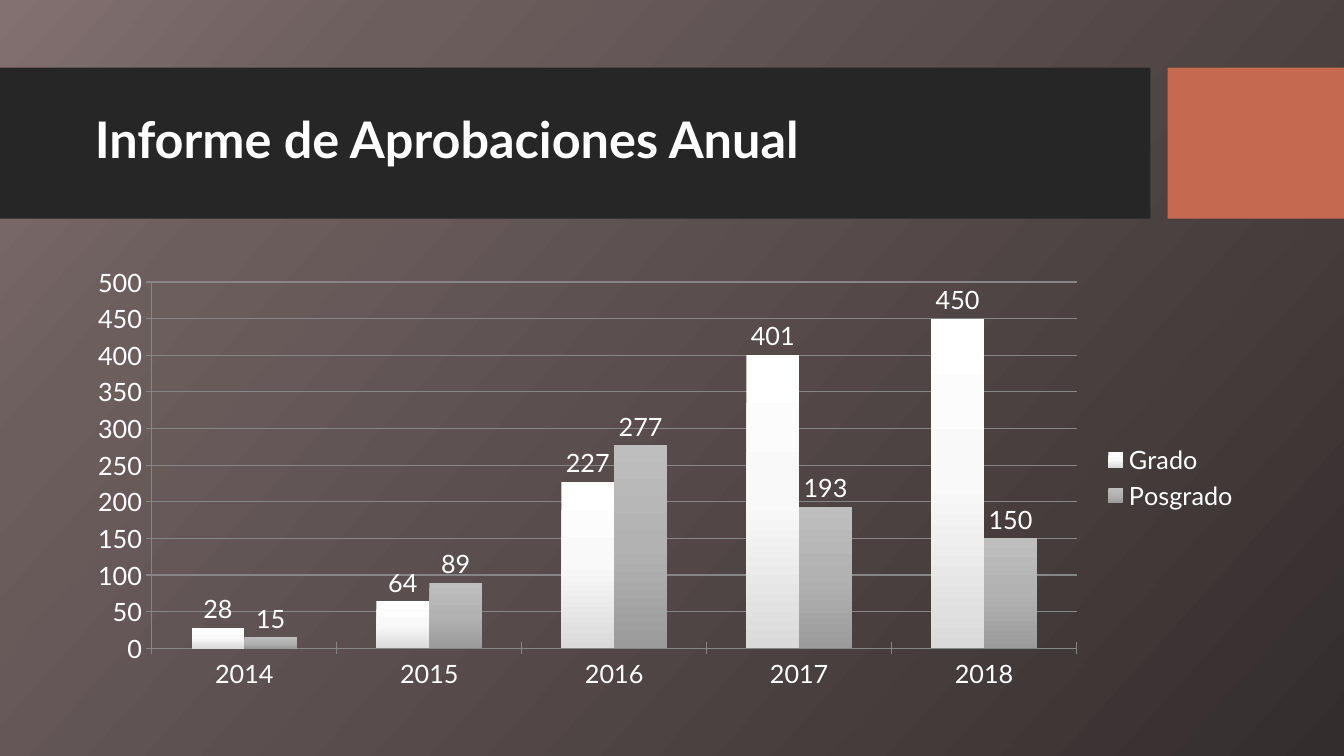
from lxml import etree
from pptx import Presentation
from pptx.chart.data import CategoryChartData
from pptx.dml.color import RGBColor
from pptx.enum.chart import XL_CHART_TYPE, XL_LABEL_POSITION, XL_LEGEND_POSITION, XL_TICK_MARK
from pptx.enum.shapes import MSO_SHAPE
from pptx.enum.text import MSO_ANCHOR
from pptx.oxml.ns import qn
from pptx.util import Inches, Pt

COLUMN_CLUSTERED = XL_CHART_TYPE.COLUMN_CLUSTERED
LABEL_ABOVE = XL_LABEL_POSITION.OUTSIDE_END
LEGEND_RIGHT = XL_LEGEND_POSITION.RIGHT
TICK_CROSS = XL_TICK_MARK.CROSS
RECTANGLE = MSO_SHAPE.RECTANGLE
MIDDLE = MSO_ANCHOR.MIDDLE

FONT = "Lato"
COLORS = {
    "band": "262626",
    "accent": "C66951",
    "text": "FFFFFF",
    "grid": "868686",
}
BACKGROUND_STOPS = [(0, "837070"), (21, "6D5E5E"), (100, "342D2D")]

YEARS = ["2014", "2015", "2016", "2017", "2018"]
# Name, yearly values, gradient from top to bottom
SERIES = [
    ("Grado", [28, 64, 227, 401, 450],
     [(0, "FFFFFF"), (50, "F9F9F9"), (100, "DADADA")]),
    ("Posgrado", [15, 89, 277, 193, 150],
     [(0, "BEBEBE"), (50, "B2B2B2"), (100, "9B9B9B")]),
]

SLIDE_WIDTH, SLIDE_HEIGHT = 13.33, 7.5
BAND_TOP, BAND_HEIGHT = 0.67, 1.5
MARGIN = 0.74


def rgb(name):
    return RGBColor.from_string(COLORS[name])


def box(left, top, width, height):
    return [Inches(length) for length in (left, top, width, height)]


def set_gradient(fill, element, stops, clockwise_angle):
    """Fill with any number of stops, given as (percent, colour)."""
    fill.gradient()
    fill.gradient_angle = 360 - clockwise_angle
    stop_list = next(element.iter(qn("a:gsLst")))
    for old_stop in list(stop_list):
        stop_list.remove(old_stop)
    for percent, color in stops:
        stop = etree.SubElement(stop_list, qn("a:gs"), pos=str(percent * 1000))
        etree.SubElement(stop, qn("a:srgbClr"), val=color)


def set_font(font, size, bold=False):
    font.name = FONT
    font.size = Pt(size)
    font.bold = bold
    font.color.rgb = rgb("text")


def add_block(slide, left, width, color):
    block = slide.shapes.add_shape(RECTANGLE, *box(left, BAND_TOP, width, BAND_HEIGHT))
    block.shadow.inherit = False
    block.fill.solid()
    block.fill.fore_color.rgb = rgb(color)
    block.line.fill.background()


def add_title(slide, text):
    title = slide.shapes.add_textbox(*box(MARGIN, 0.82, 10.51, 1.18))
    text_frame = title.text_frame
    text_frame.word_wrap = True
    text_frame.vertical_anchor = MIDDLE
    text_frame.margin_left = Inches(0.2)
    text_frame.text = text
    paragraph = text_frame.paragraphs[0]
    paragraph.line_spacing = 0.9
    set_font(paragraph.runs[0].font, 36, bold=True)


def style_axis(axis):
    axis.major_tick_mark = TICK_CROSS
    axis.format.line.color.rgb = rgb("grid")
    set_font(axis.tick_labels.font, 18)


def add_approvals_chart(slide):
    chart_data = CategoryChartData()
    chart_data.categories = YEARS
    for name, values, _ in SERIES:
        chart_data.add_series(name, values)
    chart = slide.shapes.add_chart(
        COLUMN_CLUSTERED, *box(MARGIN, 2.56, 11.65, 4.36), chart_data).chart
    set_font(chart.font, 18)
    chart.has_title = False

    # Legend
    chart.has_legend = True
    chart.legend.position = LEGEND_RIGHT
    chart.legend.include_in_layout = False
    set_font(chart.legend.font, 18)

    # Axes
    style_axis(chart.category_axis)
    value_axis = chart.value_axis
    style_axis(value_axis)
    value_axis.minimum_scale = 0
    value_axis.maximum_scale = 500
    value_axis.major_unit = 50
    value_axis.has_major_gridlines = True
    value_axis.major_gridlines.format.line.color.rgb = rgb("grid")

    # Columns
    plot = chart.plots[0]
    plot.gap_width = 150
    plot.overlap = 0
    plot.vary_by_categories = False
    for series, (_, _, stops) in zip(plot.series, SERIES):
        series.invert_if_negative = False
        set_gradient(series.format.fill, series._element, stops, 90)
        labels = series.data_labels
        labels.show_value = True
        labels.position = LABEL_ABOVE
        set_font(labels.font, 18)


def main():
    presentation = Presentation()
    presentation.slide_width = Inches(SLIDE_WIDTH)
    presentation.slide_height = Inches(SLIDE_HEIGHT)
    slide = presentation.slides.add_slide(presentation.slide_layouts[6])
    set_gradient(slide.background.fill, slide._element, BACKGROUND_STOPS, 42)

    # Title band
    add_block(slide, 0, 11.41, "band")
    add_block(slide, 11.58, SLIDE_WIDTH - 11.58, "accent")
    add_title(slide, "Informe de Aprobaciones Anual")

    add_approvals_chart(slide)
    presentation.save("out.pptx")


if __name__ == "__main__":
    main()
